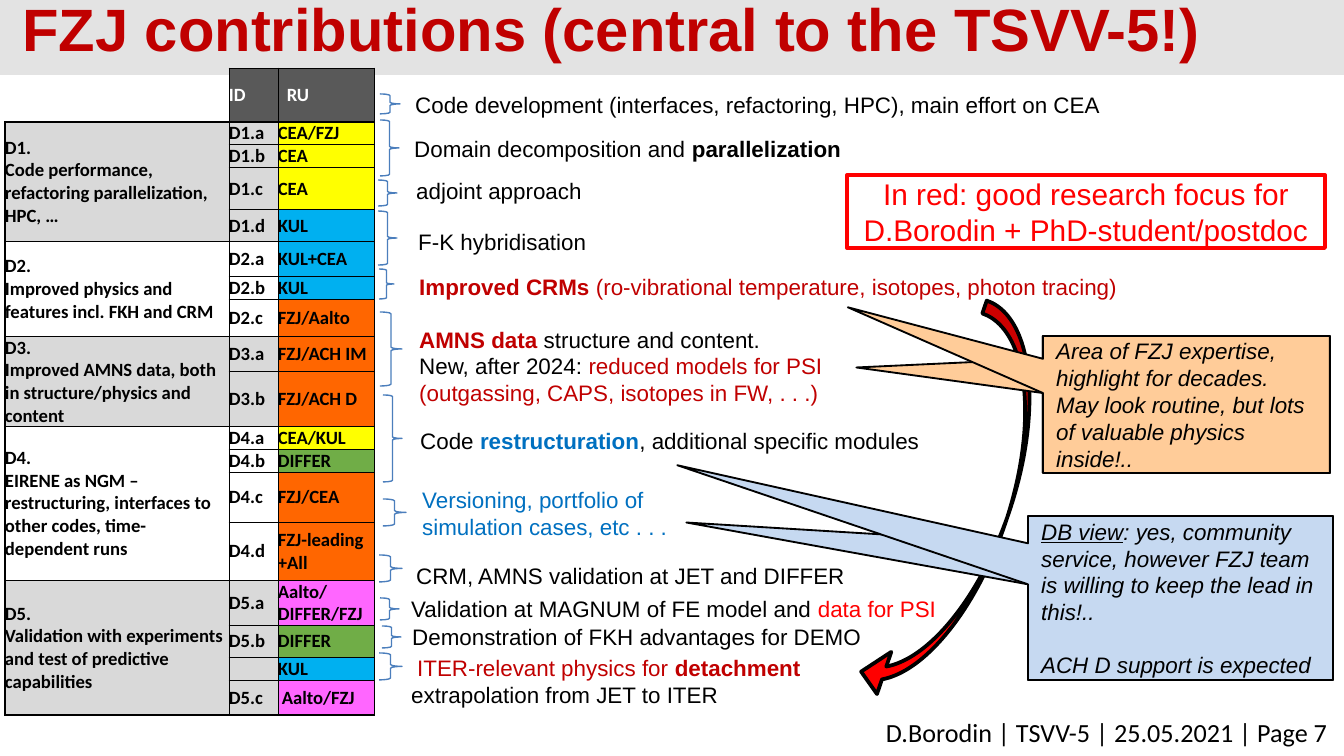
import pptx
import pptx.dml.color
import pptx.enum.shapes
import pptx.enum.text
import pptx.oxml.ns
import pptx.util
from lxml import etree

PX = 914400 / 134.4
SHAPE = pptx.enum.shapes.MSO_SHAPE
ALIGN = pptx.enum.text.PP_ALIGN
MIDDLE = pptx.enum.text.MSO_ANCHOR.MIDDLE
BLACK, DARK_RED, RED, BLUE = "000000", "C00000", "FF0000", "0070C0"
GREY, WHITE = "D9D9D9", "FFFFFF"
YELLOW, CYAN, ORANGE, GREEN, PINK = "FFFF00", "00B0F0", "FF6600", "70AD47", "FF66FF"

COLUMNS = [224, 49, 96]
HEADER_HEIGHT = 23
# Topic, its description, then (ID, RU, RU colour, row height)
DELIVERABLES = [
    ("D1.", "Code performance, refactoring parallelization, HPC, …", [
        ("D1.a", "CEA/FZJ", YELLOW, 23), ("D1.b", "CEA", YELLOW, 23),
        ("D1.c", "CEA", YELLOW, 42), ("D1.d", "KUL", CYAN, 32)]),
    ("D2.", "Improved physics and features incl. FKH and CRM", [
        ("D2.a", "KUL+CEA", CYAN, 35), ("D2.b", "KUL", CYAN, 23),
        ("D2.c", "FZJ/Aalto", ORANGE, 37)]),
    ("D3.", "Improved AMNS data, both in structure/physics and content", [
        ("D3.a", "FZJ/ACH IM", ORANGE, 35), ("D3.b", "FZJ/ACH D", ORANGE, 55)]),
    ("D4.", "EIRENE as NGM – restructuring, interfaces to other codes, "
            "time-dependent runs", [
        ("D4.a", "CEA/KUL", YELLOW, 23), ("D4.b", "DIFFER", GREEN, 23),
        ("D4.c", "FZJ/CEA", ORANGE, 50), ("D4.d", "FZJ-leading\n+All", ORANGE, 58)]),
    ("D5.", "Validation with experiments and test of predictive capabilities", [
        ("D5.a", "Aalto/\nDIFFER/FZJ", PINK, 45), ("D5.b", "DIFFER", GREEN, 32),
        ("", "KUL", CYAN, 23), ("D5.c", "Aalto/FZJ", PINK, 35)]),
]

# Brace box, text box, paragraphs of (text, colour, style) runs
COMMENTS = [
    ((2, 9, 20, 20), (24, 0, 784, 40),
     [[("Code development (interfaces, refactoring, HPC), main effort on CEA", BLACK, "")]]),
    ((2, 35, 19, 56), (23, 44, 784, 40),
     [[("Domain decomposition and ", BLACK, ""), ("parallelization", BLACK, "b")]]),
    ((0, 95, 19, 26), (25, 86, 784, 40), [[("adjoint approach", BLACK, "")]]),
    ((0, 126, 19, 54), (27, 137, 784, 40), [[("F-K hybridisation", BLACK, "")]]),
    ((1, 184, 15, 30), (28, 182, 921, 40),
     [[("Improved CRMs ", DARK_RED, "b"),
       ("(ro-vibrational temperature, isotopes, photon tracing)", DARK_RED, "")]]),
    ((2, 227, 22, 74), (28, 234, 499, 95),
     [[("AMNS data ", DARK_RED, "b"), ("structure and content.", BLACK, "")],
      [("New, after 2024: ", BLACK, ""),
       ("reduced models for PSI (outgassing, CAPS, isotopes in FW, . . .)", DARK_RED, "")]]),
    ((5, 310, 19, 87), (29, 336, 784, 40),
     [[("Code ", BLACK, ""), ("restructuration", BLUE, "b"),
       (", additional specific modules", BLACK, "")]]),
    ((5, 414, 23, 27), (31, 395, 331, 67),
     [[("Versioning, portfolio of simulation cases, etc . . .", BLUE, "")]]),
    ((1, 470, 23, 27), (25, 471, 921, 40),
     [[("CRM, AMNS validation at JET and DIFFER", BLACK, "")]]),
    ((2, 513, 19, 22), (20, 504, 921, 40),
     [[("Validation at MAGNUM of FE model and ", BLACK, ""), ("data for PSI", RED, "")]]),
    ((4, 541, 19, 22), (21, 532, 480, 40),
     [[("Demonstration of FKH advantages for DEMO", BLACK, "")]]),
    ((1, 568, 23, 27), (20, 563, 921, 67),
     [[("ITER-relevant physics for ", DARK_RED, ""), ("detachment", DARK_RED, "b")],
      [("extrapolation from JET to ITER", BLACK, "")]]),
]


def px(length):
    return pptx.util.Emu(round(length * PX))


def rgb(colour):
    return pptx.dml.color.RGBColor.from_string(colour)


def inside(box, part):
    """Move a part given relative to box onto the slide."""
    return (box[0] + part[0], box[1] + part[1], part[2], part[3])


def add_run(paragraph, text, colour, style="", size=12, font="Arial"):
    run = paragraph.add_run()
    run.text = text
    run.font.size, run.font.name = pptx.util.Pt(size), font
    run.font.color.rgb = rgb(colour)
    run.font.bold, run.font.italic = "b" in style, "i" in style
    run.font.underline = "u" in style


def write(frame, paragraphs, align=ALIGN.LEFT, **look):
    frame.word_wrap = True
    for number, runs in enumerate(paragraphs):
        paragraph = frame.add_paragraph() if number else frame.paragraphs[0]
        paragraph.alignment = align
        for run in runs:
            add_run(paragraph, *run, **look)


def add_text(slide, box, paragraphs, **look):
    frame = slide.shapes.add_textbox(*map(px, box)).text_frame
    write(frame, paragraphs, **look)
    return frame


def add_shape(slide, kind, box, fill, line, width):
    shape = slide.shapes.add_shape(kind, *map(px, box))
    shape.shadow.inherit = False
    if fill:
        shape.fill.solid()
        shape.fill.fore_color.rgb = rgb(fill)
    else:
        shape.fill.background()
    shape.line.color.rgb = rgb(line)
    shape.line.width = pptx.util.Pt(width)
    shape.text_frame.vertical_anchor = MIDDLE
    return shape


def add_header(slide, box):
    band = add_shape(slide, SHAPE.RECTANGLE, box, "E3E3E3", "E3E3E3", 0)
    band.line.fill.background()
    title = add_text(slide, inside(box, (9, 8, 1232, 51)),
                     [[("FZJ contributions (central to the TSVV-5!)", DARK_RED, "b")]], size=32)
    title.vertical_anchor = MIDDLE
    title.paragraphs[0].line_spacing = pptx.util.Pt(32)


def fill_cell(cell, text, fill, borders, colour=BLACK, indent=0):
    """Borders are the left, right, top and bottom widths in points."""
    cell.margin_left = px(indent)
    cell.margin_right = cell.margin_top = cell.margin_bottom = 0
    cell.vertical_anchor = MIDDLE
    cell.fill.solid()
    cell.fill.fore_color.rgb = rgb(fill)
    properties = cell._tc.get_or_add_tcPr()
    for position, (side, width) in enumerate(zip("LRTB", borders)):
        line = etree.Element(pptx.oxml.ns.qn("a:ln" + side), w=str(pptx.util.Pt(width)))
        paint = etree.SubElement(line, pptx.oxml.ns.qn("a:solidFill"))
        etree.SubElement(paint, pptx.oxml.ns.qn("a:srgbClr"), val=BLACK)
        properties.insert(position, line)
    paragraph = cell.text_frame.paragraphs[0]
    for number, words in enumerate(text.split("\n")):
        if number:
            paragraph.add_line_break()
        if words:
            add_run(paragraph, words, colour, "b", 10, "Calibri")
    etree.SubElement(paragraph._p, pptx.oxml.ns.qn("a:endParaRPr"), sz="1000")


def add_deliverables(slide, box):
    heights = [HEADER_HEIGHT] + [row[3] for _, _, rows in DELIVERABLES for row in rows]
    frame = slide.shapes.add_table(len(heights), len(COLUMNS), *map(px, box))
    table = frame.table
    table.first_row = table.horz_banding = False
    no_style = "{2D5ABB26-0587-4C30-8999-92F81FD0307C}"
    table._tbl.tblPr.find(pptx.oxml.ns.qn("a:tableStyleId")).text = no_style
    for column, width in zip(table.columns, COLUMNS):
        column.width = px(width)
    for row, height in zip(table.rows, heights):
        row.height = px(height)
    fill_cell(table.cell(0, 1), "ID", "595959", (0.5, 0.5, 0.5, 1), WHITE)
    fill_cell(table.cell(0, 2), "RU", "595959", (0.5, 0.5, 0.5, 1), WHITE, 9)
    top = 1
    for number, (topic, description, rows) in enumerate(DELIVERABLES):
        shade = WHITE if number % 2 else GREY
        last = top + len(rows) - 1
        table.cell(top, 0).merge(table.cell(last, 0))
        fill_cell(table.cell(top, 0), f"{topic}\n{description}", shade, (1, 0.5, 1, 1))
        for index, (code, unit, colour, _) in enumerate(rows, top):
            borders = (0.5, 0.5, 1 if index == top else 0.5, 1 if index == last else 0.5)
            fill_cell(table.cell(index, 1), code, shade, borders)
            fill_cell(table.cell(index, 2), unit, colour, borders,
                      indent=4 if code == "D5.c" else 0)
        top = last + 1


def add_comments(slide, box):
    for brace, place, paragraphs in COMMENTS:
        add_shape(slide, SHAPE.RIGHT_BRACE, inside(box, brace), None, "4B7EBC", 0.75)
        frame = add_text(slide, inside(box, place), paragraphs)
        frame.auto_size = pptx.enum.text.MSO_AUTO_SIZE.SHAPE_TO_FIT_TEXT
    iter_outlook = frame.paragraphs[0]
    iter_outlook._p.get_or_add_pPr().set("marL", str(px(6)))


def add_focus_note(slide, box):
    note = add_shape(slide, SHAPE.RECTANGLE, box, WHITE, RED, 2)
    write(note.text_frame,
          [[("In red: good research focus for D.Borodin + PhD-student/postdoc", RED)]],
          ALIGN.CENTER, size=16)


def add_focus_arrow(slide, box):
    arrow = add_shape(slide, SHAPE.CURVED_LEFT_ARROW, box, RED, BLACK, 2)
    arrow.rotation = 18.7
    for number, value in enumerate((0.153, 0.5, 0.25)):
        arrow.adjustments[number] = value


def add_callout(slide, box, fill, tips, paragraphs):
    """One box with a tail to each tip; the front one carries the text."""
    for tip in tips:
        callout = add_shape(slide, SHAPE.RECTANGULAR_CALLOUT, box, fill, BLACK, 1)
        callout.adjustments[0], callout.adjustments[1] = tip
    write(callout.text_frame, paragraphs)
    return callout.text_frame


def add_footer(slide, box):
    add_text(slide, box, [[("D.Borodin | TSVV-5 | 25.05.2021 | Page 7", BLACK)]],
             align=ALIGN.RIGHT, size=14, font="Calibri")


def main():
    deck = pptx.Presentation()
    deck.slide_width, deck.slide_height = px(1344), px(756)
    slide = deck.slides.add_slide(deck.slide_layouts[6])
    add_header(slide, (0, 0, 1344, 75))
    add_footer(slide, (267, 710, 1074, 46))
    add_comments(slide, (378, 85, 949, 630))
    add_focus_note(slide, (847, 175, 478, 73))
    add_focus_arrow(slide, (918, 304, 89, 414))
    add_deliverables(slide, (5, 68, 369, 617))
    add_callout(slide, (1043, 336, 287, 137), "FFCC99", [(-1.15, -0.27), (-1.18, -0.71)],
                [[("Area of FZJ expertise, highlight for decades. May look routine, "
                   "but lots of valuable physics inside!..", BLACK, "i")]])
    view = add_callout(slide, (1028, 516, 305, 164), "C6D9F1", [(-1.62, -0.46), (-1.65, -0.81)],
                       [[("DB view", BLACK, "iu"),
                         (": yes, community service, however FZJ team is willing to keep "
                          "the lead in this!..", BLACK, "i")],
                        [("ACH D support is expected", BLACK, "i")]])
    view.paragraphs[1].space_before = pptx.util.Pt(14)
    deck.save("out.pptx")


if __name__ == "__main__":
    main()
